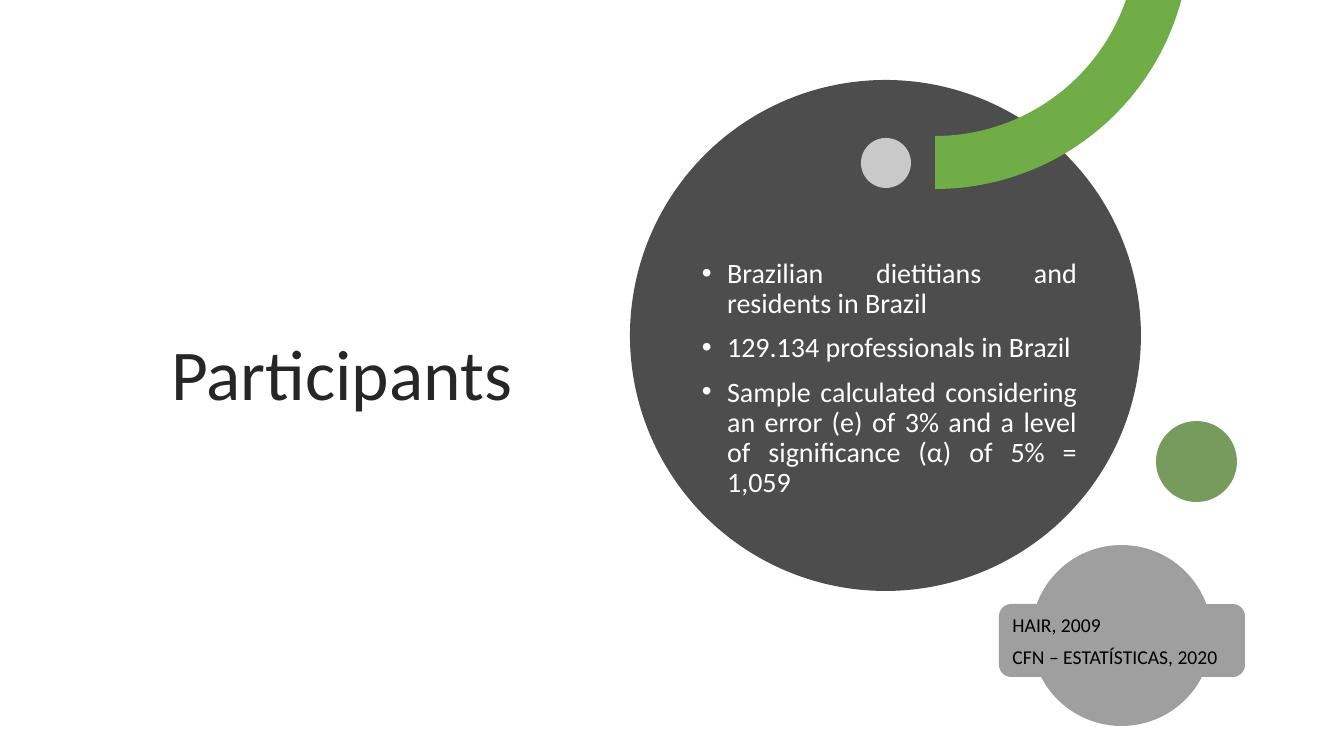
"""Build the Participants slide with its circle artwork and sources."""
import dataclasses
import math

import pptx
import pptx.dml.color
import pptx.enum.shapes
import pptx.enum.text
import pptx.oxml.ns
import pptx.util
from lxml import etree

PX = 914400 / 100.8
ALIGN = pptx.enum.text.PP_ALIGN
ANCHOR = pptx.enum.text.MSO_ANCHOR
SHAPE = pptx.enum.shapes.MSO_SHAPE


@dataclasses.dataclass(frozen=True)
class Theme:
    """Colours, font and type sizes."""
    font: str = "Calibri"
    ink: str = "262626"
    white: str = "FFFFFF"
    black: str = "000000"
    disc: str = "4D4D4D"
    green: str = "70AD47"
    dark_green: str = "548235"
    gray: str = "404040"
    label: str = "9F9F9F"
    title_size: int = 51
    body_size: int = 20
    source_size: int = 14


def emu(px):
    """Turn pixels into EMU."""
    return pptx.util.Emu(round(px * PX))


class SlideBuilder:
    """Draws styled elements on one slide."""

    def __init__(self, page, theme):
        """Keep the page and the theme."""
        self.page = page
        self.theme = theme

    def paint(self, shape, color, opacity=100):
        """Give a shape a flat fill without line or shadow."""
        shape.shadow.inherit = False
        shape.line.fill.background()
        shape.fill.solid()
        shape.fill.fore_color.rgb = pptx.dml.color.RGBColor.from_string(color)
        if opacity < 100:
            node = shape.fill._xPr.find(".//" + pptx.oxml.ns.qn("a:srgbClr"))
            alpha = etree.SubElement(node, pptx.oxml.ns.qn("a:alpha"))
            alpha.set("val", str(opacity * 1000))

    def set_text(self, shape, lines, size, color, align=ALIGN.LEFT,
                 spacing=1.0, before=0, after=0):
        """Set and format text centred vertically in a shape."""
        frame = shape.text_frame
        frame.text = "\n".join(lines)
        frame.word_wrap = True
        frame.auto_size = pptx.enum.text.MSO_AUTO_SIZE.NONE
        frame.vertical_anchor = ANCHOR.MIDDLE
        for para in frame.paragraphs:
            para.alignment = align
            para.line_spacing = spacing
            para.space_before = pptx.util.Pt(before)
            para.space_after = pptx.util.Pt(after)
            for span in para.runs:
                span.font.name = self.theme.font
                span.font.size = pptx.util.Pt(size)
                span.font.color.rgb = pptx.dml.color.RGBColor.from_string(color)

    def title(self, text, left, top, width, height):
        """Place and format the title placeholder."""
        box = self.page.shapes.title
        box.left, box.top, box.width, box.height = map(emu, (left, top, width, height))
        self.set_text(box, [text], self.theme.title_size, self.theme.ink, spacing=0.9)

    def circle(self, left, top, diameter, color, opacity=100):
        """Draw a filled circle."""
        shape = self.page.shapes.add_shape(
            SHAPE.OVAL, *map(emu, (left, top, diameter, diameter)))
        self.paint(shape, color, opacity)

    def top_cut_arc(self, center_x, center_y, inner, outer, color, steps=40):
        """Draw a quarter ring cut off at the top edge of the slide."""
        points = []
        for radius, order in ((outer, range(steps + 1)), (inner, range(steps, -1, -1))):
            start = math.asin(-center_y / radius)
            for step in order:
                angle = start + (math.pi / 2 - start) * step / steps
                points.append((emu(center_x + radius * math.cos(angle)),
                               emu(center_y + radius * math.sin(angle))))
        builder = self.page.shapes.build_freeform(*points[0], scale=1.0)
        builder.add_line_segments(points[1:], close=True)
        self.paint(builder.convert_to_shape(), color)

    def bullets(self, lines, left, top, width, height):
        """Place a justified bullet list."""
        box = self.page.shapes.add_textbox(*map(emu, (left, top, width, height)))
        self.set_text(box, lines, self.theme.body_size, self.theme.white,
                      ALIGN.JUSTIFY, spacing=0.9, before=10)
        indent = pptx.util.Inches(0.25)
        for para in box.text_frame.paragraphs:
            settings = para._p.get_or_add_pPr()
            settings.set("marL", str(indent))
            settings.set("indent", str(-indent))
            font = etree.SubElement(settings, pptx.oxml.ns.qn("a:buFont"))
            font.set("typeface", "Arial")
            mark = etree.SubElement(settings, pptx.oxml.ns.qn("a:buChar"))
            mark.set("char", "•")

    def sources(self, lines, left, top, width, height):
        """Draw the rounded label with the sources."""
        label = self.page.shapes.add_shape(
            SHAPE.ROUNDED_RECTANGLE, *map(emu, (left, top, width, height)))
        self.paint(label, self.theme.label)
        self.set_text(label, lines, self.theme.source_size, self.theme.black, after=6)


def main():
    """Build and save the deck."""
    theme = Theme()
    deck = pptx.Presentation()
    deck.slide_width, deck.slide_height = emu(1344), emu(756)
    page = deck.slides.add_slide(deck.slide_layouts[5])
    slide = SlideBuilder(page, theme)
    slide.title("Participants", 161, 120, 419, 515)
    slide.circle(630, 80, 511, theme.disc)
    slide.circle(861, 138, 50, theme.white, 70)
    slide.top_cut_arc(935, -66, 202, 255, theme.green)
    slide.circle(1156, 421, 81, theme.dark_green, 80)
    slide.circle(1031, 545, 181, theme.gray, 50)
    slide.bullets([
        "Brazilian dietitians and residents in Brazil",
        "129.134 professionals in Brazil",
        "Sample calculated considering an error (e) of 3% and a level of "
        "significance (α) of 5% = 1,059",
    ], 692, 195, 395, 368)
    slide.sources(["HAIR, 2009", "CFN – ESTATÍSTICAS, 2020"], 999, 604, 246, 73)
    deck.save("out.pptx")


if __name__ == "__main__":
    main()
